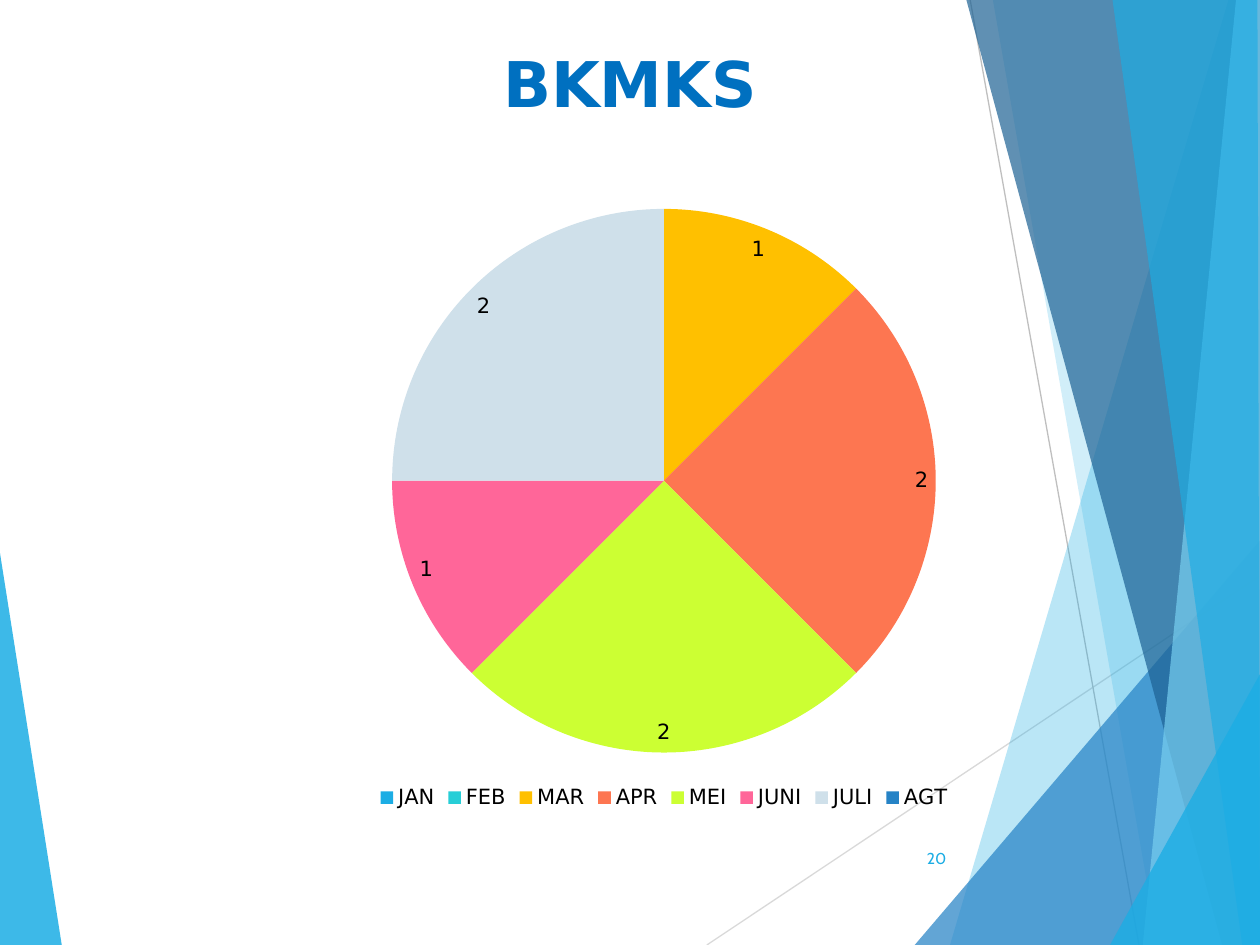
import pptx
import pptx.chart.data
import pptx.dml.color
import pptx.enum.chart
import pptx.enum.shapes
import pptx.enum.text
import pptx.oxml
import pptx.oxml.ns
import pptx.util
from lxml import etree

# Content
TITLE = "BKMKS"
PAGE_NUMBER = "20"
MONTHS = [("JAN", 0, "sky"), ("FEB", 0, "aqua"), ("MAR", 1, "amber"),
          ("APR", 2, "coral"), ("MEI", 2, "lime"), ("JUNI", 1, "pink"),
          ("JULI", 2, "mist"), ("AGT", 0, "blue")]

COLORS = {"sky": "1CADE4", "aqua": "27CED7", "amber": "FFC000",
          "coral": "FD7651", "lime": "CCFF33", "pink": "FF6699",
          "mist": "CFE0EA", "blue": "2683C6", "navy": "1D6294",
          "pale": "77CEEF", "title": "0070C0", "black": "000000",
          "light gray": "D9D9D9", "gray": "BFBFBF"}

# Slide size and places in inches; W and H are the right and bottom edges
W, H = 10, 7.5
LEFT_WEDGE = ("sky", 85, [(0, 4.39), (0.49, H), (0, H)])
RULES = [("light gray", (5.61, H), (W, 4.57)),
         ("gray", (7.7, 0), (9.04, H))]
RIGHT_BANDS = [  # colour, opacity in percent, corners
    ("sky", 30, [(9.75, 0), (7.54, H), (W, H), (W, 0)]),
    ("sky", 20, [(7.88, 0), (9.19, H), (W, H), (W, 0)]),
    ("blue", 72, [(7.26, H), (W, 4.29), (W, H)]),
    ("navy", 70, [(7.67, 0), (9.7, H), (W, H), (W, 0)]),
    ("pale", 70, [(9.81, 0), (9.07, H), (W, H), (W, 0)]),
    ("sky", 65, [(8.83, 0), (9.86, H), (W, H), (9.98, 0)]),
    ("sky", 80, [(8.81, H), (W, 5.35), (W, H)]),
]
TITLE_AREA = (0.5, 0.3, 9, 1.25)
CHART_AREA = (0.77, 1.51, 9, 4.96)
NUMBER_AREA = (7.05, 6.61, 0.56, 0.4)
PIE_SHARES = {"x": 0.26, "y": 0.03, "w": 0.48, "h": 0.87}  # of the chart

ALIGN = pptx.enum.text.PP_ALIGN
ANCHOR = pptx.enum.text.MSO_ANCHOR
CHART = pptx.enum.chart


def inches(values):
    return [pptx.util.Inches(value) for value in values]


def color(name):
    return pptx.dml.color.RGBColor.from_string(COLORS[name])


def set_font(font, color_name, **formats):
    for name, value in formats.items():
        setattr(font, name, value)
    font.color.rgb = color(color_name)


def add_band(page, color_name, opacity, corners):
    points = [inches(corner) for corner in corners]
    builder = page.shapes.build_freeform(*points[0])
    builder.add_line_segments(points[1:], close=True)
    band = builder.convert_to_shape()
    band.shadow.inherit = False
    band.line.fill.background()
    band.fill.solid()
    band.fill.fore_color.rgb = color(color_name)
    tint = band.fill._xPr.find(".//" + pptx.oxml.ns.qn("a:srgbClr"))
    etree.SubElement(tint, pptx.oxml.ns.qn("a:alpha"), val=str(opacity * 1000))


def add_rule(page, color_name, start, end):
    rule = page.shapes.add_connector(
        pptx.enum.shapes.MSO_CONNECTOR.STRAIGHT, *inches(start), *inches(end))
    rule.line.color.rgb = color(color_name)
    rule.line.width = pptx.util.Pt(0.75)
    etree.SubElement(rule._element.spPr, pptx.oxml.ns.qn("a:effectLst"))


def add_text(page, area, text, align, anchor, color_name, **formats):
    frame = page.shapes.add_textbox(*inches(area)).text_frame
    frame.word_wrap = True
    frame.vertical_anchor = anchor
    para = frame.paragraphs[0]
    para.alignment = align
    span = para.add_run()
    span.text = text
    set_font(span.font, color_name, **formats)


def place_pie(chart):
    plot_area = chart._chartSpace.chart.plotArea
    for old in plot_area.findall(pptx.oxml.ns.qn("c:layout")):
        plot_area.remove(old)
    settings = {"layoutTarget": "inner", "xMode": "edge", "yMode": "edge"}
    settings.update(PIE_SHARES)
    layout = etree.Element(pptx.oxml.ns.qn("c:layout"))
    manual = etree.SubElement(layout, pptx.oxml.ns.qn("c:manualLayout"))
    for name, value in settings.items():
        etree.SubElement(manual, pptx.oxml.ns.qn("c:" + name), val=str(value))
    plot_area.insert(0, layout)


def add_pie(page):
    names, values, color_names = zip(*MONTHS)
    data = pptx.chart.data.CategoryChartData()
    data.categories = names
    data.add_series("Series 1", values)
    chart = page.shapes.add_chart(
        CHART.XL_CHART_TYPE.PIE, *inches(CHART_AREA), data).chart
    set_font(chart.font, "black", name="Cabin", size=pptx.util.Pt(18))
    chart.has_title = False
    small = {"name": "DejaVu Sans", "size": pptx.util.Pt(12)}

    # Legend
    chart.has_legend = True
    chart.legend.position = CHART.XL_LEGEND_POSITION.BOTTOM
    chart.legend.include_in_layout = False
    set_font(chart.legend.font, "black", **small)

    # Slices, with zero values left unlabelled
    plot = chart.plots[0]
    plot.vary_by_categories = True
    for index, color_name in enumerate(color_names):
        fill = plot.series[0].points[index].format.fill
        fill.solid()
        fill.fore_color.rgb = color(color_name)
    labels = plot.series[0].data_labels
    label_formats = {"show_value": True, "number_format": "0;;;",
                     "number_format_is_linked": False,
                     "position": CHART.XL_LABEL_POSITION.INSIDE_END}
    for name, value in label_formats.items():
        setattr(labels, name, value)
    set_font(labels.font, "black", **small)
    place_pie(chart)


def main():
    deck = pptx.Presentation()
    deck.slide_width, deck.slide_height = inches((W, H))
    page = deck.slides.add_slide(deck.slide_layouts[6])

    # Background decoration
    add_band(page, *LEFT_WEDGE)
    for rule in RULES:
        add_rule(page, *rule)
    for band in RIGHT_BANDS:
        add_band(page, *band)

    # Title, chart and page number
    add_text(page, TITLE_AREA, TITLE, ALIGN.CENTER, ANCHOR.TOP, "title",
             name="DejaVu Sans", size=pptx.util.Pt(36), bold=True)
    add_pie(page)
    add_text(page, NUMBER_AREA, PAGE_NUMBER, ALIGN.RIGHT, ANCHOR.MIDDLE, "sky",
             name="Cabin", size=pptx.util.Pt(9))
    deck.save("out.pptx")


if __name__ == "__main__":
    main()
